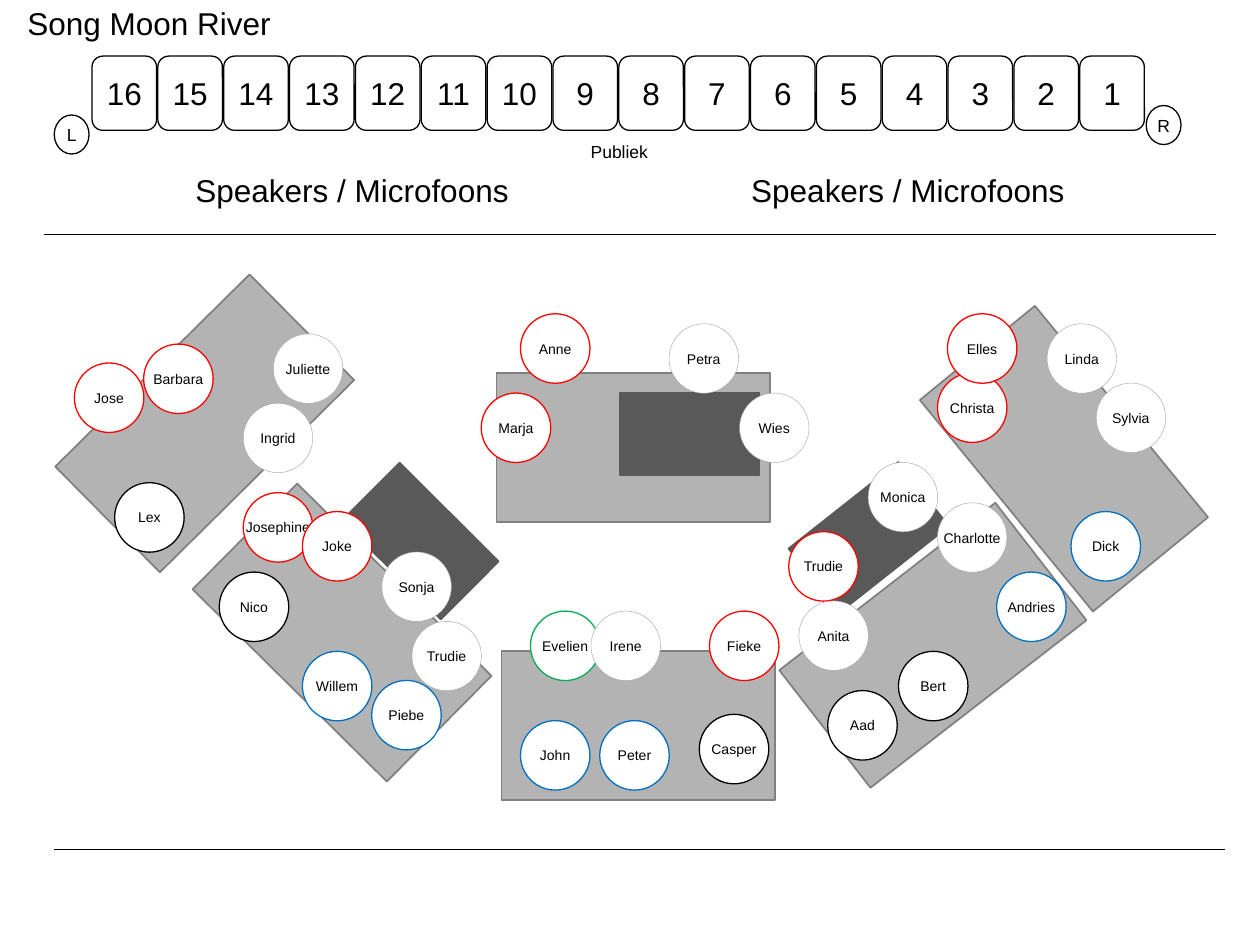
from dataclasses import dataclass

import pptx
import pptx.dml.color
import pptx.enum.shapes
import pptx.enum.text
import pptx.oxml
import pptx.util
from pptx.enum.shapes import MSO_SHAPE
from pptx.enum.text import MSO_ANCHOR, PP_ALIGN

Pt = pptx.util.Pt


@dataclass(frozen=True)
class Theme:
    font: str = "Arial"
    title: int = 18
    label: int = 10
    name: int = 8
    black: str = "000000"
    white: str = "FFFFFF"
    red: str = "FF0000"
    blue: str = "0070C0"
    green: str = "00B050"
    pale: str = "A6A6A6"
    table: str = "B3B3B3"
    table_edge: str = "808080"
    piano: str = "595959"
    thin: float = 0.75
    hairline: float = 0.25
    edge: float = 1


THEME = Theme()
SEAT = 39.7
TABLE = (156.2, 85)
RISER = (79.9, 46.8)

# left, top, rotation
RISERS = [(200.2, 285.8, 44.9), (456.5, 283.7, 321.7), (354.2, 224.6, 0)]
TABLES = [
    (283.7, 213.1, 0), (286.6, 372.2, 0), (455, 326.2, 322.2),
    (117.4, 319, 44.7), (529.9, 219.6, 50.7), (38.9, 199.4, 315.3),
]

# left, top and name of each singer, by outline colour
SEATS = {
    THEME.red: [
        (82.1, 196.6, "Barbara"), (42.5, 207.4, "Jose"),
        (139, 281.5, "Josephine"), (172.8, 292.3, "Joke"),
        (297.4, 179.3, "Anne"), (275, 224.6, "Marja"),
        (405.4, 349.2, "Fieke"), (450.7, 303.8, "Trudie"),
        (535.7, 213.1, "Christa"), (541.4, 179.3, "Elles"),
    ],
    THEME.green: [(303.1, 349.2, "Evelien")],
    THEME.blue: [
        (172.8, 372.2, "Willem"), (212.4, 388.8, "Piebe"),
        (297.4, 411.8, "John"), (342.7, 411.8, "Peter"),
        (569.5, 326.9, "Andries"), (612, 292.3, "Dick"),
    ],
    THEME.black: [
        (65.5, 275.8, "Lex"), (125.3, 326.9, "Nico"),
        (399.6, 408.2, "Casper"), (473, 394.6, "Aad"),
        (513.4, 372.2, "Bert"),
    ],
    THEME.pale: [
        (156.2, 190.8, "Juliette"), (139, 230.4, "Ingrid"),
        (218.2, 315.4, "Sonja"), (235.4, 355, "Trudie"),
        (337.7, 349.2, "Irene"), (382.3, 185, "Petra"),
        (422.6, 224.6, "Wies"), (456.5, 343.4, "Anita"),
        (496.1, 264.2, "Monica"), (535.7, 287.3, "Charlotte"),
        (598.3, 185, "Linda"), (626.4, 218.9, "Sylvia"),
    ],
}


def rgb(value):
    return pptx.dml.color.RGBColor.from_string(value)


def write(box, text, size=THEME.title, align=PP_ALIGN.CENTER,
          anchor=MSO_ANCHOR.MIDDLE, wrap=False):
    frame = box.text_frame
    frame.word_wrap = wrap
    frame.vertical_anchor = anchor
    para = frame.paragraphs[0]
    para.alignment = align
    span = para.add_run()
    span.text = text
    span.font.name = THEME.font
    span.font.size = Pt(size)
    span.font.color.rgb = rgb(THEME.black)


def add_caption(page, text, left, top, width, height, **text_format):
    box = page.shapes.add_textbox(Pt(left), Pt(top), Pt(width), Pt(height))
    write(box, text, anchor=MSO_ANCHOR.TOP, wrap=True, **text_format)


def add_block(page, kind, left, top, width, height, fill=None,
              line=THEME.black, weight=THEME.thin, rotation=0):
    block = page.shapes.add_shape(kind, Pt(left), Pt(top), Pt(width), Pt(height))
    block.shadow.inherit = False
    block.rotation = rotation
    if fill:
        block.fill.solid()
        block.fill.fore_color.rgb = rgb(fill)
    else:
        block.fill.background()
    block.line.color.rgb = rgb(line)
    block.line.width = Pt(weight)
    return block


def add_rule(page, left, right, y):
    rule = page.shapes.add_connector(
        pptx.enum.shapes.MSO_CONNECTOR.STRAIGHT, Pt(left), Pt(y), Pt(right), Pt(y))
    rule.line.color.rgb = rgb(THEME.black)
    rule.line.width = Pt(THEME.thin)
    rule._element.spPr.append(pptx.oxml.parse_xml(
        '<a:effectLst xmlns:a="http://schemas.openxmlformats.org/drawingml/2006/main"/>'))


def add_rectangles(page, places, size, fill, line):
    for left, top, rotation in places:
        add_block(page, MSO_SHAPE.RECTANGLE, left, top, *size, fill=fill,
                  line=line, weight=THEME.edge, rotation=rotation)


def add_number_row(page, count=16, left=52.6, step=37.63):
    for index in range(count):
        tile = add_block(page, MSO_SHAPE.ROUNDED_RECTANGLE,
                         left + index * step, 32.1, 36.9, 42.4)
        write(tile, str(count - index))


def add_side_mark(page, text, left, top):
    mark = add_block(page, MSO_SHAPE.OVAL, left, top, 19.9, 22.3, fill=THEME.white)
    write(mark, text, size=THEME.label)


def add_seats(page):
    for colour, singers in SEATS.items():
        weight = THEME.hairline if colour == THEME.pale else THEME.thin
        for left, top, name in singers:
            seat = add_block(page, MSO_SHAPE.OVAL, left, top, SEAT, SEAT,
                             fill=THEME.white, line=colour, weight=weight)
            write(seat, name, size=THEME.name)


def main():
    deck = pptx.Presentation()
    deck.slide_width, deck.slide_height = Pt(720), Pt(540)
    page = deck.slides.add_slide(deck.slide_layouts[6])

    add_caption(page, "Song Moon River", 8.6, -1.4, 266.4, 29, align=PP_ALIGN.LEFT)
    add_number_row(page)
    add_side_mark(page, "L", 31, 65.7)
    add_side_mark(page, "R", 655, 60.3)
    add_caption(page, "Publiek", 297.4, 77, 113, 19.4, size=THEME.label)
    for left in (87.8, 405.4):
        add_caption(page, "Speakers / Microfoons", left, 94.3, 226.8, 29)
    add_rule(page, 25.2, 694.8, 133.9)
    add_rule(page, 31, 699.8, 485.3)

    *side_risers, centre_riser = RISERS
    add_rectangles(page, side_risers, RISER, THEME.piano, THEME.piano)
    add_rectangles(page, TABLES, TABLE, THEME.table, THEME.table_edge)
    add_rectangles(page, [centre_riser], RISER, THEME.piano, THEME.piano)
    add_seats(page)
    deck.save("out.pptx")


if __name__ == "__main__":
    main()
